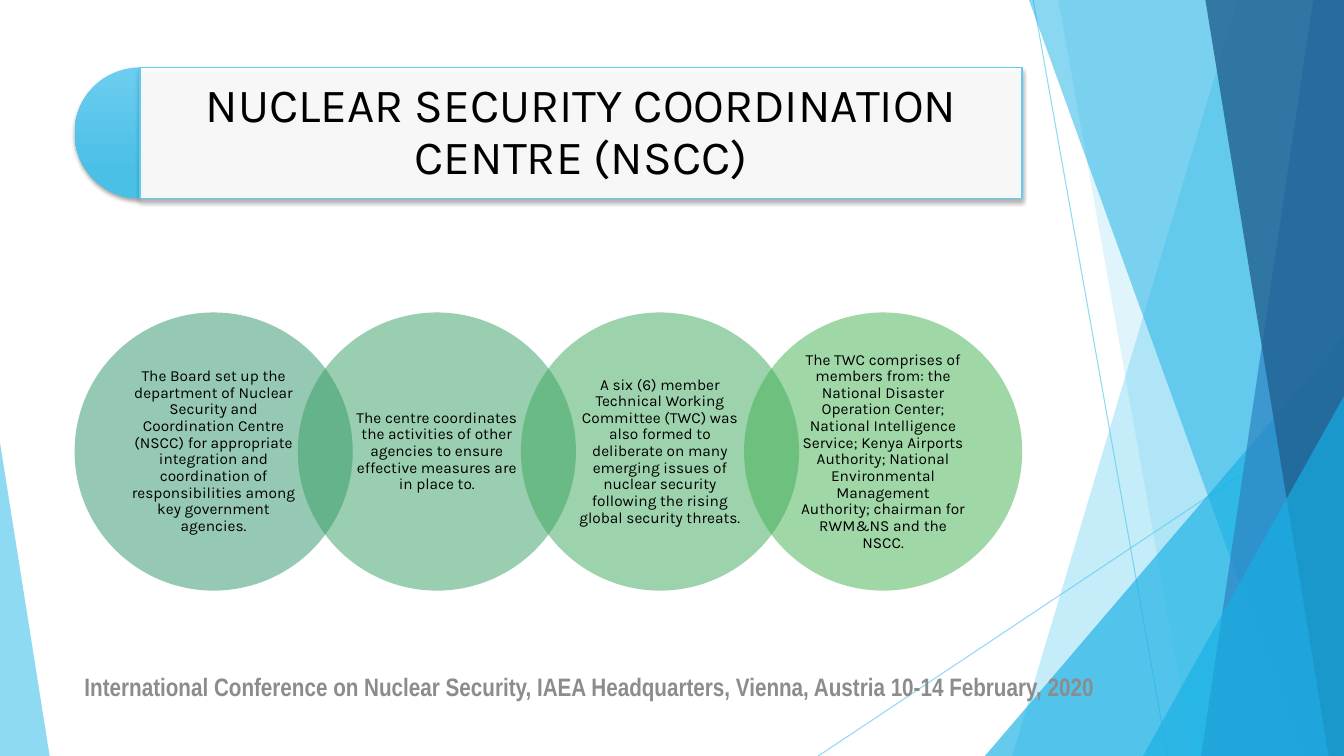
from dataclasses import dataclass
from typing import Any

import lxml.etree
import pptx
import pptx.dml.color
import pptx.enum.dml
import pptx.enum.shapes
import pptx.enum.text
import pptx.oxml.ns
import pptx.util

Pt = pptx.util.Pt
Preset = pptx.enum.shapes.MSO_SHAPE
Align = pptx.enum.text.PP_ALIGN
qn = pptx.oxml.ns.qn

WIDTH, HEIGHT = 960, 540


@dataclass(frozen=True)
class Theme:
    sky: str = "5FCBEF"
    azure: str = "17B0E4"
    blue: str = "2E83C3"
    navy: str = "226292"
    cap_top: str = "6CCDF0"
    cap_bottom: str = "4BC0E6"
    white: str = "FFFFFF"
    black: str = "000000"
    grey: str = "8C8C8C"
    font: str = "Karla"
    venue_font: str = "Arial Narrow"
    title_size: float = 34
    circle_size: float = 11
    venue_size: float = 18


@dataclass(frozen=True)
class Ray:
    start: tuple[float, float]
    end: tuple[float, float]


@dataclass(frozen=True)
class Band:
    """Full-height facet between a slanted left side and the slide's right edge."""
    top_x: float
    bottom_x: float
    color: str
    opacity: int


@dataclass(frozen=True)
class Wedge:
    """Right triangle standing on the bottom edge; apex 0 is left, 1 is right."""
    left: float
    top: float
    width: float
    apex: float
    color: str
    opacity: int


@dataclass(frozen=True)
class Circle:
    color: str
    text: str


THEME = Theme()

RAYS = [Ray((738, 0), (834, HEIGHT)), Ray((WIDTH, 290), (584.5, HEIGHT))]

# Back to front
FACETS = [
    Band(884, 723, THEME.sky, 36),
    Band(756, 852, THEME.sky, 20),
    Wedge(703.5, 240, 256.5, 1, THEME.azure, 66),
    Band(735, 929.5, THEME.azure, 50),
    Band(938, 858, THEME.blue, 70),
    Band(861, 949, THEME.navy, 80),
    Wedge(816.5, 283, 143.5, 1, THEME.azure, 66),
    Wedge(0, 316, 35.5, 0, THEME.sky, 70),
]

CIRCLES = [
    Circle("2E946B", "The Board set up the department of Nuclear Security and Coordination Centre "
           "(NSCC) for appropriate integration and coordination of responsibilities among key "
           "government agencies."),
    Circle("349E63", "The centre coordinates the activities of other agencies to ensure effective "
           "measures are in place to."),
    Circle("3BA75A", "A six (6) member Technical Working Committee (TWC) was also formed to "
           "deliberate on many emerging issues of nuclear security following the rising global "
           "security threats."),
    Circle("42B051", "The TWC comprises of members from: the National Disaster Operation Center; "
           "National Intelligence Service; Kenya Airports Authority; National Environmental "
           "Management Authority; chairman for RWM&NS and the NSCC."),
]

LEFT = 53.3
CAP_TOP, CAP_SIZE = 48.2, 93.6
TITLE_WIDTH = 630
CIRCLE_TOP, CIRCLE_SIZE, CIRCLE_STEP = 223.2, 198.7, 159.4


def rgb(color: str) -> pptx.dml.color.RGBColor:
    return pptx.dml.color.RGBColor.from_string(color)


def paint(fill: Any, owner: Any, color: str, opacity: int = 100) -> None:
    """Fill with a solid colour; owner is the XML element holding the fill."""
    fill.solid()
    fill.fore_color.rgb = rgb(color)
    if opacity < 100:
        tint = owner.find(qn("a:solidFill"))[0]
        lxml.etree.SubElement(tint, qn("a:alpha"), val=str(opacity * 1000))


def paint_shape(shape: Any, color: str, opacity: int) -> None:
    paint(shape.fill, shape._element.spPr, color, opacity)
    shape.line.fill.background()
    shape.shadow.inherit = False


def add_soft_shadow(shape: Any) -> None:
    shape.shadow.inherit = False
    effects = shape._element.spPr.find(qn("a:effectLst"))
    shadow = lxml.etree.SubElement(effects, qn("a:outerShdw"), blurRad=str(Pt(3)),
                                   dist=str(Pt(2)), dir="5400000", rotWithShape="0")
    tint = lxml.etree.SubElement(shadow, qn("a:srgbClr"), val=THEME.black)
    lxml.etree.SubElement(tint, qn("a:alpha"), val="35000")


def write(shape: Any, text: str, *, size: float, font: str = THEME.font,
          color: str = THEME.black, bold: bool = False, align: Any = Align.CENTER,
          spacing: float = 0.9, inset: tuple[float, float] = (7.2, 3.6)) -> None:
    frame = shape.text_frame
    frame.word_wrap = True
    frame.auto_size = pptx.enum.text.MSO_AUTO_SIZE.NONE
    frame.vertical_anchor = pptx.enum.text.MSO_ANCHOR.MIDDLE
    frame.margin_left = frame.margin_right = Pt(inset[0])
    frame.margin_top = frame.margin_bottom = Pt(inset[1])
    paragraph = frame.paragraphs[0]
    paragraph.alignment = align
    paragraph.line_spacing = spacing
    run = paragraph.add_run()
    run.text = text
    run.font.name, run.font.size, run.font.bold = font, Pt(size), bold
    run.font.color.rgb = rgb(color)


def add_preset(slide: Any, preset: Any, left: float, top: float,
               width: float, height: float) -> Any:
    return slide.shapes.add_shape(preset, Pt(left), Pt(top), Pt(width), Pt(height))


def draw_ray(slide: Any, ray: Ray) -> None:
    line = slide.shapes.add_connector(pptx.enum.shapes.MSO_CONNECTOR.STRAIGHT,
                                      *map(Pt, ray.start + ray.end))
    line.line.width = Pt(0.75)
    properties = line._element.spPr
    paint(line.line.fill, properties.find(qn("a:ln")), THEME.sky, 70)
    lxml.etree.SubElement(properties, qn("a:effectLst"))


def draw_facet(slide: Any, facet: Band | Wedge) -> None:
    if isinstance(facet, Band):
        outline = slide.shapes.build_freeform(facet.top_x, 0, scale=float(Pt(1)))
        outline.add_line_segments([(WIDTH, 0), (WIDTH, HEIGHT), (facet.bottom_x, HEIGHT)])
        shape = outline.convert_to_shape()
    else:
        shape = add_preset(slide, Preset.ISOSCELES_TRIANGLE, facet.left, facet.top,
                           facet.width, HEIGHT - facet.top)
        shape.adjustments[0] = facet.apex
    paint_shape(shape, facet.color, facet.opacity)


def draw_heading(slide: Any) -> None:
    # Half-round cap
    cap = add_preset(slide, Preset.PIE, LEFT, CAP_TOP, CAP_SIZE, CAP_SIZE)
    cap.adjustments[0], cap.adjustments[1] = 54, 162
    cap.fill.gradient()
    cap.fill.gradient_angle = 270
    stops = [(0, THEME.cap_top), (0.78, THEME.cap_bottom)]
    for stop, (position, color) in zip(cap.fill.gradient_stops, stops):
        stop.position, stop.color.rgb = position, rgb(color)
    cap.line.fill.background()
    add_soft_shadow(cap)

    # Title panel, raised above the cap
    title = slide.shapes.title
    slide.shapes._spTree.append(title._element)
    title.left, title.top = Pt(LEFT + CAP_SIZE / 2), Pt(CAP_TOP)
    title.width, title.height = Pt(TITLE_WIDTH), Pt(CAP_SIZE)
    paint(title.fill, title._element.spPr, THEME.white, 90)
    title.line.color.rgb = rgb(THEME.sky)
    title.line.width = Pt(1)
    add_soft_shadow(title)
    write(title, "NUCLEAR SECURITY COORDINATION CENTRE (NSCC)",
          size=THEME.title_size, inset=(10, 10))


def draw_circle(slide: Any, index: int, circle: Circle) -> None:
    shape = add_preset(slide, Preset.OVAL, LEFT + index * CIRCLE_STEP, CIRCLE_TOP,
                       CIRCLE_SIZE, CIRCLE_SIZE)
    paint_shape(shape, circle.color, 50)
    write(shape, circle.text, size=THEME.circle_size, inset=(11, 1.4))


def main() -> None:
    deck = pptx.Presentation()
    deck.slide_width, deck.slide_height = Pt(WIDTH), Pt(HEIGHT)
    slide = deck.slides.add_slide(deck.slide_layouts.get_by_name("Title Only"))

    # Backdrop
    for ray in RAYS:
        draw_ray(slide, ray)
    for facet in FACETS:
        draw_facet(slide, facet)

    # Content
    draw_heading(slide)
    for index, circle in enumerate(CIRCLES):
        draw_circle(slide, index, circle)

    # Venue line
    venue = slide.shapes.add_textbox(Pt(LEFT), Pt(476), Pt(778), Pt(29))
    write(venue, "International Conference on Nuclear Security, IAEA Headquarters, Vienna, "
          "Austria 10-14 February, 2020", size=THEME.venue_size, font=THEME.venue_font,
          color=THEME.grey, bold=True, align=Align.LEFT, spacing=1.0)

    deck.save("out.pptx")


if __name__ == "__main__":
    main()
